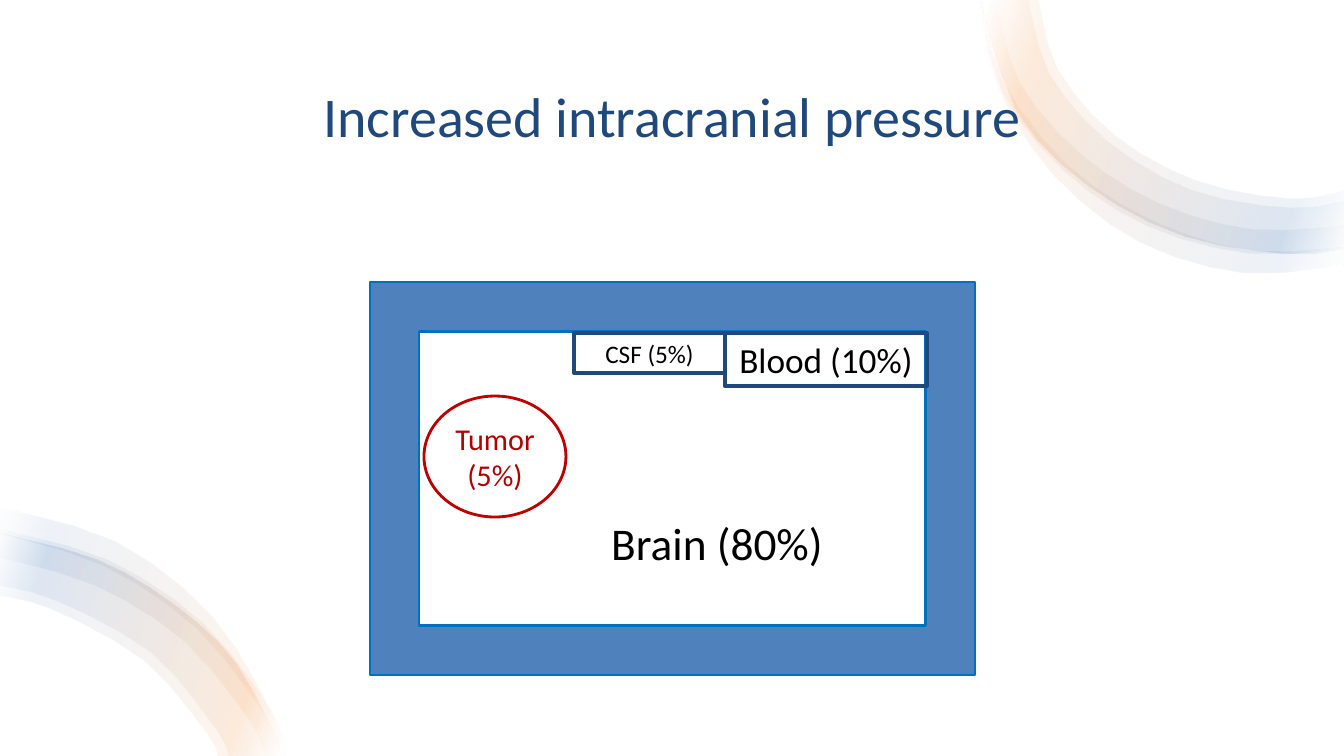
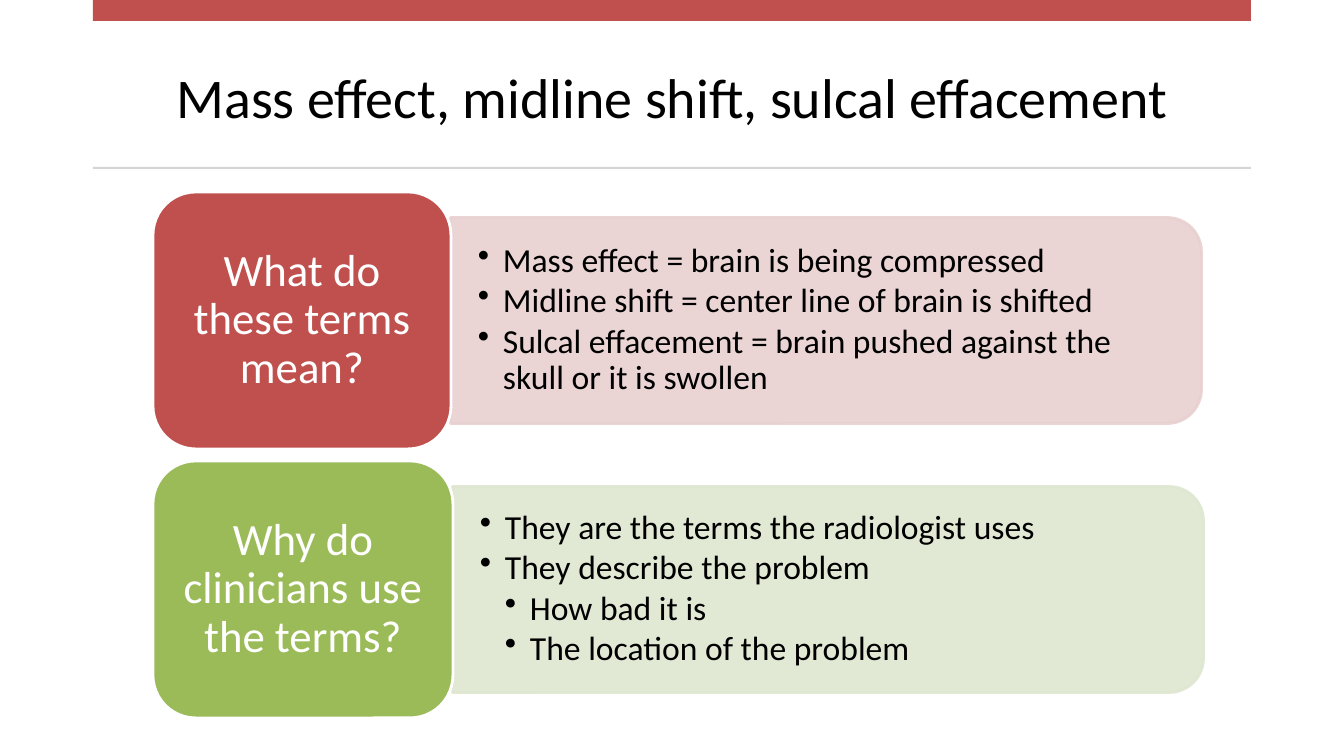
"""Build two slides on intracranial pressure and the terms that describe it."""
import dataclasses

import pptx
import pptx.dml.color
import pptx.enum.shapes
import pptx.enum.text
import pptx.oxml
import pptx.oxml.ns
import pptx.util

EMU_PER_PX = 914400 / 100.8
WIDTH, HEIGHT = 1344, 756
FONT = "Calibri"
COLORS = {
    "black": "000000",
    "white": "FFFFFF",
    "navy": "1F497D",
    "blue": "4F81BD",
    "edge": "0070C0",
    "orange": "F79646",
    "crimson": "C00000",
    "dark_red": "B50000",
    "red": "C0504D",
    "rose": "E8D0D0",
    "green": "9BBB59",
    "mint": "DEE7D1",
    "grey": "D5D5D5",
}
GRADIENT = ((2, "white"), (16, "orange"), (85, "blue"), (100, "white"))
SHAPE = pptx.enum.shapes.MSO_SHAPE
CENTER = pptx.enum.text.PP_ALIGN.CENTER
LEFT = pptx.enum.text.PP_ALIGN.LEFT
Knots = list[tuple[int, int]]


@dataclasses.dataclass(frozen=True)
class Box:
    left: int
    top: int
    width: int
    height: int


@dataclasses.dataclass(frozen=True)
class Para:
    text: str
    size: float
    color: str = "black"
    level: int = 0
    spacing: float = 1.0


@dataclasses.dataclass(frozen=True)
class Part:
    kind: int
    box: Box
    line: str
    weight: int
    fill: str | None = None
    para: Para | None = None


@dataclasses.dataclass(frozen=True)
class Swoosh:
    angle: int
    bands: list[tuple[Knots, Knots]]


@dataclasses.dataclass(frozen=True)
class Card:
    question: str
    tile: str
    panel: str
    tile_width: int
    bullets: list[tuple[int, str]]


TOP_OUTER = [(981, 0), (1017, 111), (1088, 185), (1183, 235), (1289, 253), (1344, 247)]
LOW_OUTER = [(0, 534), (97, 560), (174, 605), (236, 664), (284, 756)]
SWOOSHES = [
    Swoosh(20, [
        (TOP_OUTER, [(1039, 0), (1058, 69), (1115, 135), (1196, 180), (1289, 198), (1344, 190)]),
        (TOP_OUTER, [(1029, 0), (1050, 74), (1109, 142), (1193, 190), (1289, 207), (1344, 200)]),
        ([(981, 0), (1002, 90), (1062, 169), (1148, 226), (1249, 253), (1344, 248)],
         [(997, 0), (1020, 82), (1080, 153), (1159, 203), (1252, 229), (1344, 225)]),
        ([(979, 0), (999, 88), (1054, 175), (1140, 242), (1246, 273), (1344, 264)],
         [(982, 0), (1002, 79), (1067, 164), (1152, 220), (1249, 250), (1344, 247)]),
    ]),
    Swoosh(200, [
        ([(0, 508), (116, 542), (212, 616), (273, 714), (287, 756)],
         [(0, 534), (103, 566), (197, 629), (266, 717), (281, 756)]),
        (LOW_OUTER, [(0, 596), (53, 610), (144, 661), (207, 734), (217, 756)]),
        ([(0, 530), (107, 560), (202, 623), (270, 711), (285, 756)],
         [(0, 558), (95, 586), (183, 641), (249, 721), (265, 756)]),
        (LOW_OUTER, [(0, 586), (56, 601), (151, 653), (216, 730), (228, 756)]),
    ]),
]
SKULL = [
    Part(SHAPE.FRAME, Box(370, 282, 605, 393), "edge", 2, "blue"),
    Part(SHAPE.RECTANGLE, Box(574, 333, 151, 40), "navy", 3, None, Para("CSF (5%)", 18)),
    Part(SHAPE.RECTANGLE, Box(725, 333, 202, 53), "navy", 3, None, Para("Blood (10%)", 25.2)),
    Part(SHAPE.OVAL, Box(424, 396, 142, 121), "crimson", 2, None,
         Para("Tumor (5%)", 21.6, "dark_red")),
]
CARDS = [
    Card("What do these terms mean?", "red", "rose", 298, [
        (1, "Mass effect = brain is being compressed"),
        (1, "Midline shift = center line of brain is shifted"),
        (1, "Sulcal effacement = brain pushed against the skull or it is swollen"),
    ]),
    Card("Why do clinicians use the terms?", "green", "mint", 300, [
        (1, "They are the terms the radiologist uses"),
        (1, "They describe the problem"),
        (2, "How bad it is"),
        (2, "The location of the problem"),
    ]),
]
CARD_LEFT, CARD_TOP, CARD_HEIGHT, CARD_PITCH = 153, 192, 257, 269
PANEL_LENGTH, PANEL_DEPTH = 751, 206
BULLET_INDENT = 25


def px(n: float) -> int:
    return round(n * EMU_PER_PX)


def place(box: Box) -> tuple[int, ...]:
    return tuple(px(n) for n in dataclasses.astuple(box))


def assign(obj, values: dict) -> None:
    for name, value in values.items():
        setattr(obj, name, value)


def rgb(name: str):
    return pptx.dml.color.RGBColor.from_string(COLORS[name])


def paint(sp, fill: str | None, line: str | None = None, weight: int = 2) -> None:
    sp.shadow.inherit = False
    if fill:
        sp.fill.solid()
        sp.fill.fore_color.rgb = rgb(fill)
    else:
        sp.fill.background()
    if line:
        sp.line.color.rgb = rgb(line)
        sp.line.width = pptx.util.Pt(weight)
    else:
        sp.line.fill.background()


def add_bullet(p, level: int) -> None:
    pPr = p._p.get_or_add_pPr()
    pPr.set("marL", str(px(BULLET_INDENT * level)))
    pPr.set("indent", str(px(-BULLET_INDENT)))
    pPr.append(pptx.oxml.parse_xml(f'<a:buChar {pptx.oxml.ns.nsdecls("a")} char="•"/>'))


def write(sp, paras: list[Para], inset_x: int = 10, inset_y: int = 5) -> None:
    tf = sp.text_frame
    assign(tf, {
        "word_wrap": True,
        "vertical_anchor": pptx.enum.text.MSO_ANCHOR.MIDDLE,
        "margin_left": px(inset_x),
        "margin_right": px(inset_x),
        "margin_top": px(inset_y),
        "margin_bottom": px(inset_y),
    })
    for i, para in enumerate(paras):
        p = tf.add_paragraph() if i else tf.paragraphs[0]
        assign(p, {
            "alignment": LEFT if para.level else CENTER,
            "level": para.level,
            "line_spacing": para.spacing,
            "space_after": pptx.util.Pt(3 if para.level else 0),
        })
        if para.level:
            add_bullet(p, para.level)
        r = p.add_run()
        r.text = para.text
        assign(r.font, {"name": FONT, "size": pptx.util.Pt(para.size)})
        r.font.color.rgb = rgb(para.color)


def add_shape(s, kind: int, box: Box, fill: str | None, line: str | None = None,
              weight: int = 2):
    sp = s.shapes.add_shape(kind, *place(box))
    paint(sp, fill, line, weight)
    return sp


def add_text(s, box: Box, paras: list[Para], inset_x: int = 10, inset_y: int = 5) -> None:
    write(s.shapes.add_textbox(*place(box)), paras, inset_x, inset_y)


def add_title(s, text: str, box: Box, color: str) -> None:
    add_text(s, box, [Para(text, 40, color)])


def smooth(knots: Knots, steps: int = 3) -> list[tuple[int, int]]:
    padded = [knots[0], *knots, knots[-1]]
    points = []
    for a, b, c, d in zip(padded, padded[1:], padded[2:], padded[3:]):
        for t in (i / steps for i in range(steps)):
            points.append(tuple(
                px(q + (r - o) * t / 2 + (2 * o - 5 * q + 4 * r - w) * t**2 / 2
                   + (3 * q - o - 3 * r + w) * t**3 / 2)
                for o, q, r, w in zip(a, b, c, d)
            ))
    return points + [tuple(px(n) for n in knots[-1])]


def add_swoosh(s, swoosh: Swoosh) -> None:
    stops = "".join(
        f'<a:gs pos="{pos * 1000}"><a:srgbClr val="{COLORS[color]}">'
        '<a:alpha val="10000"/></a:srgbClr></a:gs>'
        for pos, color in GRADIENT
    )
    xml = (f'<a:gradFill {pptx.oxml.ns.nsdecls("a")} rotWithShape="1"><a:gsLst>{stops}</a:gsLst>'
           f'<a:lin ang="{swoosh.angle * 60000}" scaled="0"/></a:gradFill>')
    for outer, inner in swoosh.bands:
        points = smooth(outer) + smooth(inner)[::-1]
        builder = s.shapes.build_freeform(*points[0])
        builder.add_line_segments(points[1:], close=True)
        sp = builder.convert_to_shape()
        paint(sp, "white")
        spPr = sp._element.spPr
        solid = spPr.find(pptx.oxml.ns.qn("a:solidFill"))
        spPr.replace(solid, pptx.oxml.parse_xml(xml))


def add_card(s, card: Card, top: int) -> None:
    right = CARD_LEFT + card.tile_width
    middle = top + CARD_HEIGHT // 2
    panel_box = Box(right + (PANEL_LENGTH - PANEL_DEPTH) // 2, middle - PANEL_LENGTH // 2,
                    PANEL_DEPTH, PANEL_LENGTH)
    panel = add_shape(s, SHAPE.ROUND_2_SAME_RECTANGLE, panel_box, card.panel, card.panel)
    panel.rotation = 90
    for clr in panel._element.spPr.iter(pptx.oxml.ns.qn("a:srgbClr")):
        clr.append(pptx.oxml.parse_xml(
            f'<a:alpha {pptx.oxml.ns.nsdecls("a")} val="90000"/>'))
    text_box = Box(right, middle - 93, 741, 186)
    add_text(s, text_box,
             [Para(text, 24, "black", level, 0.9) for level, text in card.bullets], 27, 14)
    tile_box = Box(CARD_LEFT, top, card.tile_width, CARD_HEIGHT)
    tile = add_shape(s, SHAPE.ROUNDED_RECTANGLE, tile_box, card.tile, "white")
    write(tile, [Para(card.question, 32, "white", 0, 0.9)], 13, 7)


def build_pressure(s) -> None:
    for swoosh in SWOOSHES:
        add_swoosh(s, swoosh)
    add_title(s, "Increased intracranial pressure", Box(89, 50, 1166, 131), "navy")
    for part in SKULL:
        sp = add_shape(s, part.kind, part.box, part.fill, part.line, part.weight)
        if part.para:
            write(sp, [part.para], 4, 4)
    add_text(s, Box(567, 512, 300, 60), [Para("Brain (80%)", 32.4)])


def build_terms(s) -> None:
    add_title(s, "Mass effect, midline shift, sulcal effacement", Box(93, 37, 1158, 119), "black")
    for top, height, color in ((0, 21, "red"), (167, 2, "grey")):
        add_shape(s, SHAPE.RECTANGLE, Box(93, top, 1158, height), color)
    for i, card in enumerate(CARDS):
        add_card(s, card, CARD_TOP + i * CARD_PITCH)


def main() -> None:
    prs = pptx.Presentation()
    assign(prs, {"slide_width": px(WIDTH), "slide_height": px(HEIGHT)})
    for build in (build_pressure, build_terms):
        build(prs.slides.add_slide(prs.slide_layouts[6]))
    prs.save("out.pptx")


if __name__ == "__main__":
    main()
